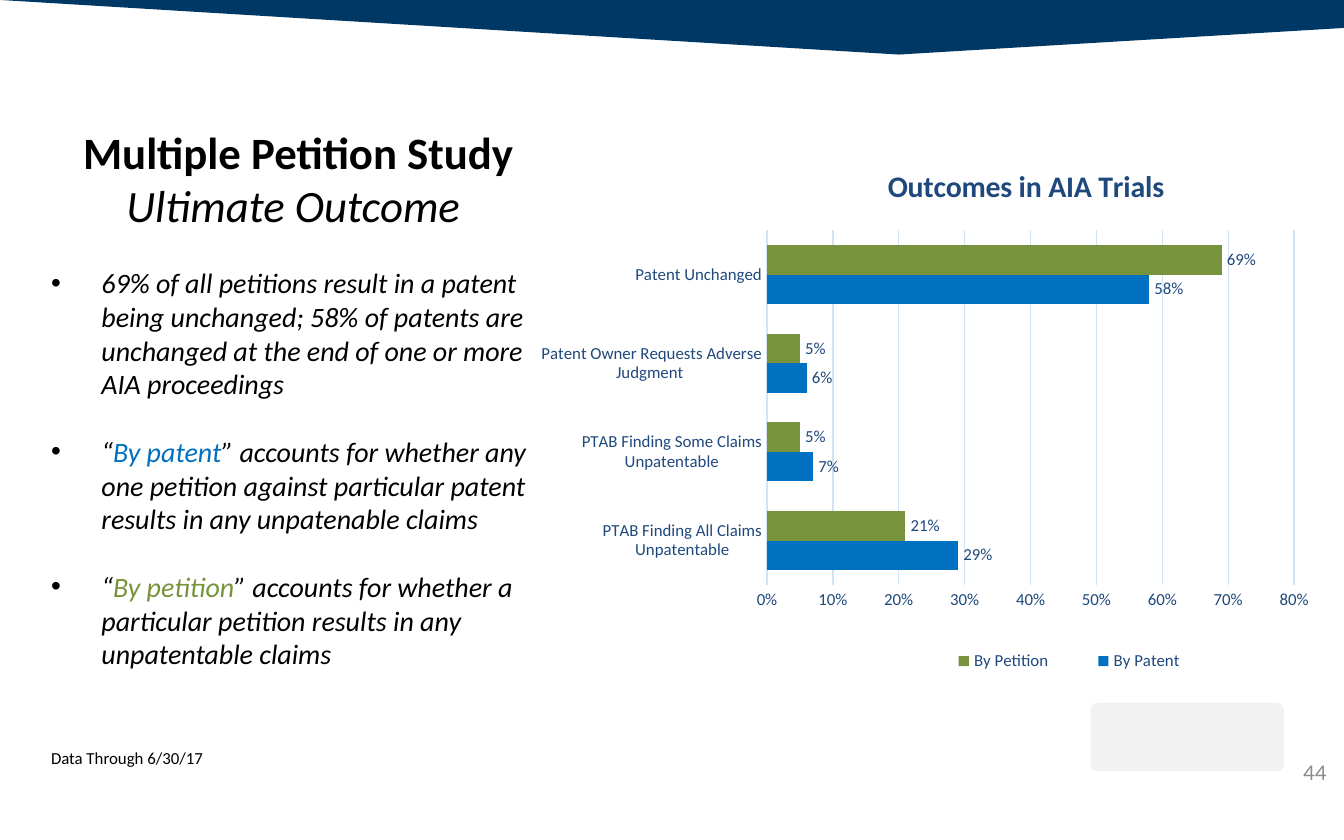
from lxml.etree import SubElement
from pptx import Presentation
from pptx.chart.data import CategoryChartData
from pptx.dml.color import RGBColor
from pptx.enum.chart import XL_CHART_TYPE, XL_LABEL_POSITION, XL_LEGEND_POSITION, XL_TICK_MARK
from pptx.enum.shapes import MSO_SHAPE
from pptx.enum.text import PP_ALIGN
from pptx.oxml import parse_xml
from pptx.oxml.ns import nsdecls, qn
from pptx.util import Pt

PX = 9525  # EMU in one px, 96 px to the inch
BLACK, NAVY, GRAY, PALE = "000000", "003865", "8A8A8A", "F2F2F2"
BLUE, GREEN, CHART_TEXT, GRID = "0070C0", "77933C", "1F497D", "D4E3F4"

BULLETS = [
    [("69% of all petitions result in a patent being unchanged; 58% of patents are "
      "unchanged at the end of one or more AIA proceedings", BLACK)],
    [("“", BLACK), ("By patent", BLUE),
     ("” accounts for whether any one petition against particular patent "
      "results in any unpatenable claims", BLACK)],
    [("“", BLACK), ("By petition", GREEN),
     ("” accounts for whether a particular petition results in any "
      "unpatentable claims", BLACK)],
]
CATEGORIES = ["PTAB Finding All Claims Unpatentable", "PTAB Finding Some Claims Unpatentable",
              "Patent Owner Requests Adverse Judgment ", "Patent Unchanged"]
SERIES = [("By Patent", BLUE, [0.29, 0.07, 0.06, 0.58]),
          ("By Petition", GREEN, [0.21, 0.05, 0.05, 0.69])]


def rgb(color):
    return RGBColor.from_string(color)


def box(*lengths):
    return [length * PX for length in lengths]


def style_font(font, size, color, name="Calibri", bold=False, italic=False):
    font.size, font.name = Pt(size), name
    font.bold, font.italic = bold, italic
    font.color.rgb = rgb(color)


def add_text(paragraph, text, **font_format):
    run = paragraph.add_run()
    run.text = text
    style_font(run.font, **font_format)


def add_text_frame(slide, left, top, width, height, wrap=True, margins=True):
    frame = slide.shapes.add_textbox(*box(left, top, width, height)).text_frame
    frame.word_wrap = wrap
    if not margins:
        frame.margin_left = frame.margin_right = frame.margin_top = frame.margin_bottom = 0
    return frame


def paint(shape, color):
    shape.shadow.inherit = False
    shape.fill.solid()
    shape.fill.fore_color.rgb = rgb(color)
    shape.line.fill.background()


def make_bullet(paragraph, indent=36):
    properties = paragraph._p.get_or_add_pPr()
    properties.set("marL", str(indent * PX))
    properties.set("indent", str(-indent * PX))
    SubElement(properties, qn("a:buFont")).set("typeface", "Arial")
    SubElement(properties, qn("a:buChar")).set("char", "•")


def add_banner(slide):
    builder = slide.shapes.build_freeform(960, 0, scale=PX)
    builder.add_line_segments([(0, 0), (642, 39), (960, 20)], close=True)
    paint(builder.convert_to_shape(), NAVY)


def add_study_text(slide):
    frame = add_text_frame(slide, 27, 84, 372, 499)
    heading = frame.paragraphs[0]
    subtitle = frame.add_paragraph()
    heading.alignment = subtitle.alignment = PP_ALIGN.CENTER
    add_text(heading, "Multiple Petition Study", size=24, color=BLACK, bold=True)
    add_text(subtitle, "Ultimate Outcome ", size=24, color=BLACK, italic=True)
    for parts in BULLETS:
        paragraph = frame.add_paragraph()
        paragraph.space_before = Pt(18.3)
        make_bullet(paragraph)
        for text, color in parts:
            add_text(paragraph, text, size=15, color=color, italic=True)


def place(element, index, x, y, width=None, height=None, inner=False):
    """Give a chart part a manual layout, in fractions of the chart."""
    for old in element.findall(qn("c:layout")):
        element.remove(old)
    settings = [("xMode", "edge"), ("yMode", "edge"), ("x", x), ("y", y)]
    if inner:
        settings.insert(0, ("layoutTarget", "inner"))
    if width:
        settings += [("w", width), ("h", height)]
    children = "".join(f'<c:{tag} val="{value}"/>' for tag, value in settings)
    element.insert(index, parse_xml(
        f'<c:layout {nsdecls("c")}><c:manualLayout>{children}</c:manualLayout></c:layout>'))


def style_axis(axis):
    axis.major_tick_mark = axis.minor_tick_mark = XL_TICK_MARK.NONE
    style_font(axis.tick_labels.font, 9, CHART_TEXT)


def style_line(line):
    line.color.rgb = rgb(GRID)
    line.width = Pt(0.75)


def style_series(series, color):
    series.format.fill.solid()
    series.format.fill.fore_color.rgb = rgb(color)
    series.invert_if_negative = False
    labels = series.data_labels
    labels.show_value = True
    labels.position = XL_LABEL_POSITION.OUTSIDE_END
    labels.number_format, labels.number_format_is_linked = "0%", False
    style_font(labels.font, 9, CHART_TEXT)


def add_outcomes_chart(slide):
    data = CategoryChartData(number_format="0%")
    data.categories = CATEGORIES
    for name, _, values in SERIES:
        data.add_series(name, values)
    chart = slide.shapes.add_chart(
        XL_CHART_TYPE.BAR_CLUSTERED, *box(386, 93, 568, 436), data).chart
    style_font(chart.font, 10, BLACK)

    # Bars and their labels
    plot = chart.plots[0]
    plot.gap_width, plot.overlap, plot.vary_by_categories = 100, 0, False
    for series, (_, color, _) in zip(plot.series, SERIES):
        style_series(series, color)
    place(chart._chartSpace.chart.plotArea, 0, 0.285, 0.164, 0.663, 0.581, inner=True)

    # Axes
    style_axis(chart.category_axis)
    style_line(chart.category_axis.format.line)
    values = chart.value_axis
    style_axis(values)
    values.format.line.fill.background()
    values.minimum_scale, values.maximum_scale, values.major_unit = 0, 0.8, 0.1
    values.tick_labels.number_format = "0%"
    values.tick_labels.number_format_is_linked = False
    style_line(values.major_gridlines.format.line)

    # Title and legend
    chart.has_title = True
    title = chart.chart_title
    add_text(title.text_frame.paragraphs[0], "Outcomes in AIA Trials",
             size=16, color=CHART_TEXT, bold=True)
    place(title._element, 1, 0.43, 0.05)
    chart.has_legend = True
    legend = chart.legend
    legend.position, legend.include_in_layout = XL_LEGEND_POSITION.BOTTOM, False
    style_font(legend.font, 9, CHART_TEXT)
    place(legend._element, 1, 0.47, 0.83, 0.39, 0.08)


def main():
    presentation = Presentation()
    presentation.slide_width, presentation.slide_height = box(960, 600)
    slide = presentation.slides.add_slide(presentation.slide_layouts[6])

    # Banner and emblem plate
    add_banner(slide)
    plate = slide.shapes.add_shape(MSO_SHAPE.ROUNDED_RECTANGLE, *box(779, 502, 138, 49))
    plate.adjustments[0] = 0.1
    paint(plate, PALE)

    # Study text and chart
    add_study_text(slide)
    add_outcomes_chart(slide)

    # Date note and slide number
    note = add_text_frame(slide, 27, 529, 129, 24, wrap=False)
    add_text(note.paragraphs[0], "Data Through 6/30/17", size=9, color=BLACK)
    number = add_text_frame(slide, 931, 543, 23, 17, margins=False)
    add_text(number.paragraphs[0], "44", size=10.8, color=GRAY, name="Lato")

    presentation.save("out.pptx")


if __name__ == "__main__":
    main()
